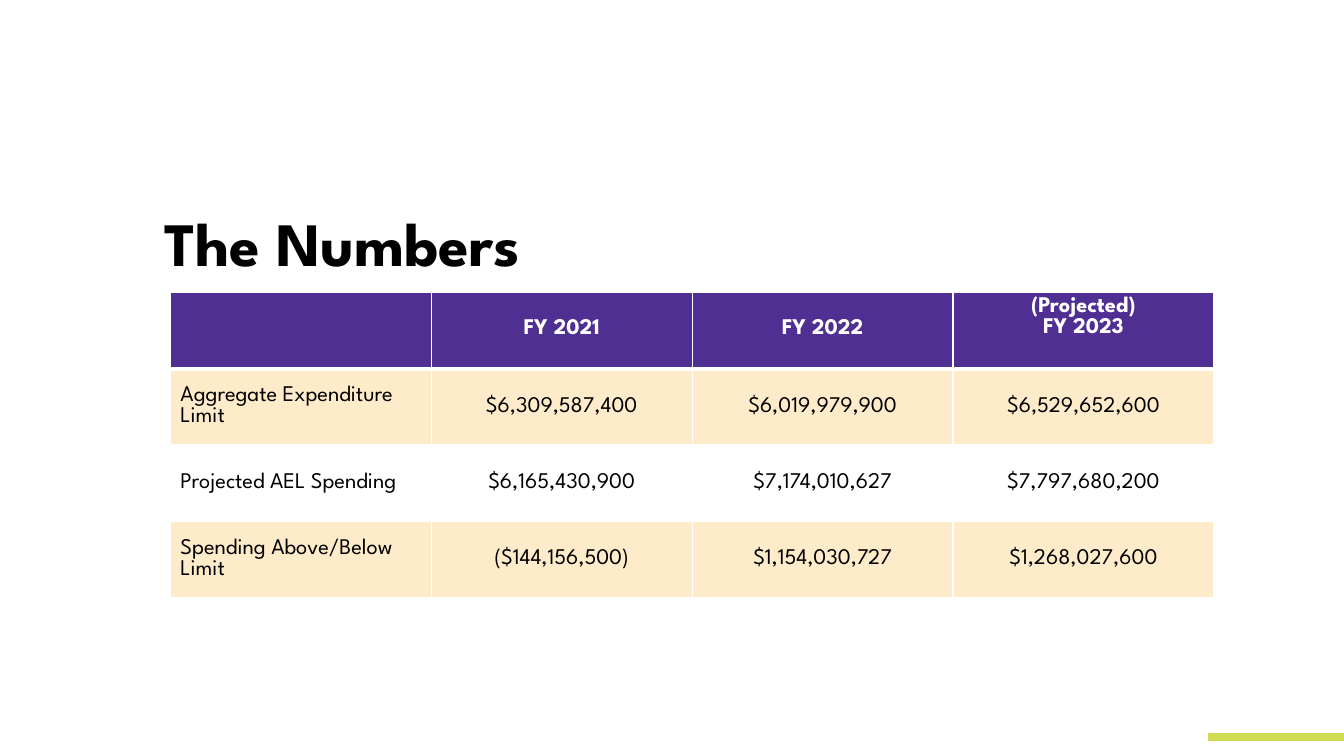
from lxml import etree
from pptx import Presentation
from pptx import util as u
from pptx.dml.color import RGBColor
from pptx.enum import shapes, text
from pptx.oxml import ns

FONT = "League Spartan"
WHITE, BLACK, PURPLE, AMBER, LIME = "FFFFFF", "000000", "4F2F92", "FDBF50", "CFDB53"
HEADINGS = ["", "FY 2021", "FY 2022", "(Projected)\nFY 2023"]
ROWS = [
    ["Aggregate Expenditure Limit", "$6,309,587,400", "$6,019,979,900", "$6,529,652,600"],
    ["Projected AEL Spending", "$6,165,430,900", "$7,174,010,627", "$7,797,680,200"],
    ["Spending Above/Below Limit", "($144,156,500)", "$1,154,030,727", "$1,268,027,600"],
]
HEADING_LINE = 0.21


def paint(target, color):
    """Give a fill, or the fill of a line, a solid hex colour."""
    target.solid()
    target.fore_color.rgb = RGBColor.from_string(color)


def style(para, size, color, bold):
    """Set the font of a paragraph."""
    para.font.name, para.font.size, para.font.bold = FONT, u.Pt(size), bold
    paint(para.font.fill, color)


def add_borders(cell, bottom):
    """Draw white cell borders with the given bottom width in points."""
    properties = cell._tc.get_or_add_tcPr()
    for index, (side, width) in enumerate([("L", 1), ("R", 1), ("T", 1), ("B", bottom)]):
        line = etree.Element(ns.qn(f"a:ln{side}"), w=str(u.Pt(width)))
        fill = etree.SubElement(line, ns.qn("a:solidFill"))
        etree.SubElement(fill, ns.qn("a:srgbClr"), val=WHITE)
        properties.insert(index, line)


def fill_cell(cell, row, column, words):
    """Write and colour one table cell according to its row and column."""
    heading = row == 0
    cell.text = words
    cell.vertical_anchor = text.MSO_ANCHOR.TOP if heading else text.MSO_ANCHOR.MIDDLE
    if heading and "\n" not in words:
        cell.margin_top = u.Inches(0.05 + HEADING_LINE)
    for para in cell.text_frame.paragraphs:
        centred = heading or column > 0
        para.alignment = text.PP_ALIGN.CENTER if centred else text.PP_ALIGN.LEFT
        style(para, 16, WHITE if heading else BLACK, heading)
    if heading:
        paint(cell.fill, PURPLE)
    elif row % 2:
        paint(cell.fill, AMBER)
        shade = cell._tc.tcPr.find(".//" + ns.qn("a:srgbClr"))
        etree.SubElement(shade, ns.qn("a:alpha"), val="30000")
    else:
        cell.fill.background()
    add_borders(cell, 3 if heading else 1)


def add_numbers(page, left, top, width, height):
    """Place the spending table in the given box."""
    grid = [HEADINGS] + ROWS
    frame = page.shapes.add_table(len(grid), len(HEADINGS), left, top, width, height)
    table = frame.table
    table.first_row = table.horz_banding = False
    for row, line in enumerate(grid):
        for column, words in enumerate(line):
            fill_cell(table.cell(row, column), row, column, words)


def add_title(page, left, top, width, height):
    """Place the slide title in the given box."""
    box = page.shapes.add_textbox(left, top, width, height)
    box.text_frame.word_wrap = True
    box.text_frame.vertical_anchor = text.MSO_ANCHOR.MIDDLE
    para = box.text_frame.paragraphs[0]
    para.text = "The Numbers"
    para.line_spacing = 0.9
    style(para, 44, BLACK, True)


def add_accent(page, left, top, width):
    """Draw the lime bar at the lower right edge."""
    bar = page.shapes.add_connector(
        shapes.MSO_CONNECTOR.STRAIGHT, left + width, top, left, top)
    bar.line.width = u.Pt(6)
    paint(bar.line.fill, LIME)
    etree.SubElement(bar._element.spPr, ns.qn("a:effectLst"))


def main():
    """Build the slide and save it."""
    deck = Presentation()
    deck.slide_width, deck.slide_height = u.Inches(13.33), u.Inches(7.5)
    page = deck.slides.add_slide(deck.slide_layouts[6])
    paint(page.background.fill, WHITE)
    add_accent(page, u.Inches(11.98), u.Inches(7.31), u.Inches(1.35))
    add_numbers(page, u.Inches(1.69), u.Inches(2.9), u.Inches(10.35), u.Inches(3.03))
    add_title(page, u.Inches(1.53), u.Inches(2.01), u.Inches(11.5), u.Inches(0.87))
    deck.save("out.pptx")


if __name__ == "__main__":
    main()
